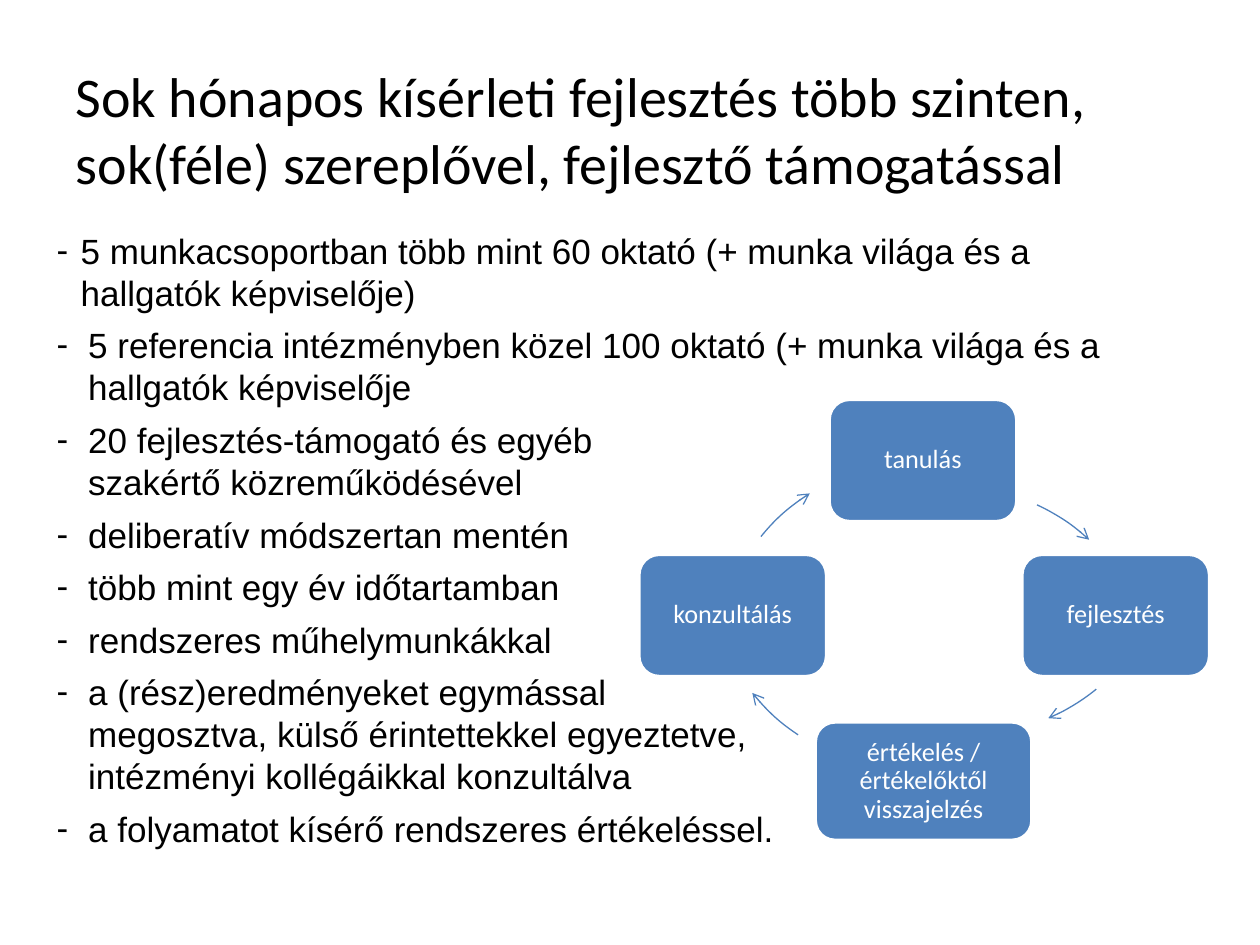
from dataclasses import dataclass

from lxml import etree
from pptx import Presentation
from pptx.dml.color import RGBColor
from pptx.enum.shapes import MSO_SHAPE
from pptx.enum.text import MSO_ANCHOR, MSO_AUTO_SIZE, PP_ALIGN
from pptx.oxml.ns import qn
from pptx.slide import Slide
from pptx.text.text import Font
from pptx.util import Inches, Pt

ROUNDED = MSO_SHAPE.ROUNDED_RECTANGLE
ARC = MSO_SHAPE.ARC
LEFT = PP_ALIGN.LEFT
CENTER = PP_ALIGN.CENTER
MIDDLE = MSO_ANCHOR.MIDDLE
TOP = MSO_ANCHOR.TOP
NO_AUTOFIT = MSO_AUTO_SIZE.NONE

ARC_DIAMETER = 3.2
DEGREES_TO_ADJUSTMENT = 0.6


@dataclass(frozen=True)
class Theme:
    text: RGBColor = RGBColor(0, 0, 0)
    accent: RGBColor = RGBColor(0x4F, 0x81, 0xBD)
    light: RGBColor = RGBColor(255, 255, 255)
    heading_font: str = "Calibri"
    body_font: str = "Arial"
    title_size: int = 32
    body_size: int = 20
    box_size: int = 15


@dataclass(frozen=True)
class Item:
    text: str
    indent: float = 0.25


@dataclass(frozen=True)
class Step:
    text: str
    left: float
    top: float
    width: float = 1.49
    height: float = 0.97


@dataclass(frozen=True)
class Arrow:
    left: float
    top: float
    start: float
    end: float


THEME = Theme()

TITLE = ("Sok hónapos kísérleti fejlesztés több szinten, "
         "sok(féle) szereplővel, fejlesztő támogatással")

ITEMS = [
    Item("5 munkacsoportban több mint 60 oktató (+ munka világa és a "
         "hallgatók képviselője)", 0.19),
    Item("5 referencia intézményben közel 100 oktató (+ munka világa és a "
         "hallgatók képviselője"),
    Item("20 fejlesztés-támogató és egyéb\vszakértő közreműködésével"),
    Item("deliberatív módszertan mentén"),
    Item("több mint egy év időtartamban"),
    Item("rendszeres műhelymunkákkal"),
    Item("a (rész)eredményeket egymással\vmegosztva, külső érintettekkel "
         "egyeztetve,\vintézményi kollégáikkal konzultálva"),
    Item("a folyamatot kísérő rendszeres értékeléssel."),
]

STEPS = [
    Step("tanulás", 6.58, 3.17),
    Step("fejlesztés", 8.11, 4.4),
    Step("értékelés / értékelőktől visszajelzés", 6.47, 5.73, 1.72, 0.94),
    Step("konzultálás", 5.07, 4.4),
]

ARROWS = [
    Arrow(5.96, 3.86, 294.8, 312.7),
    Arrow(6.09, 2.63, 50.8, 66.8),
    Arrow(5.62, 2.9, 123.6, 141.3),
    Arrow(5.68, 3.67, 219.2, 237.8),
]


def style_font(font: Font, name: str, size: int, color: RGBColor) -> None:
    font.name = name
    font.size = Pt(size)
    font.color.rgb = color


def fill_title(slide: Slide) -> None:
    title = slide.shapes.title
    title.left, title.top = Inches(0.5), Inches(0.44)
    title.width, title.height = Inches(9), Inches(1.18)
    frame = title.text_frame
    frame.text = TITLE
    frame.auto_size = NO_AUTOFIT
    frame.vertical_anchor = TOP
    para = frame.paragraphs[0]
    para.alignment = LEFT
    style_font(para.font, THEME.heading_font, THEME.title_size, THEME.text)


def fill_body(slide: Slide) -> None:
    body = slide.placeholders[1]
    body.left, body.top = Inches(0.35), Inches(1.77)
    body.width, body.height = Inches(8.61), Inches(5.2)
    frame = body.text_frame
    frame.auto_size = NO_AUTOFIT
    for index, item in enumerate(ITEMS):
        para = frame.add_paragraph() if index else frame.paragraphs[0]
        para.text = item.text
        properties = para._p.get_or_add_pPr()
        properties.set("marL", str(Inches(item.indent)))
        properties.set("indent", str(-Inches(item.indent)))
        etree.SubElement(properties, qn("a:buChar")).set("char", "-")
        para.line_spacing = Pt(24)
        para.space_before = Pt(0)
        para.space_after = Pt(6)
        style_font(para.font, THEME.body_font, THEME.body_size, THEME.text)


def draw_step(slide: Slide, step: Step) -> None:
    box = slide.shapes.add_shape(
        ROUNDED, Inches(step.left), Inches(step.top),
        Inches(step.width), Inches(step.height))
    box.shadow.inherit = False
    box.fill.solid()
    box.fill.fore_color.rgb = THEME.accent
    box.line.color.rgb = THEME.light
    box.line.width = Pt(2)
    frame = box.text_frame
    frame.text = step.text
    frame.word_wrap = True
    frame.vertical_anchor = MIDDLE
    frame.margin_left = frame.margin_right = Inches(0.06)
    frame.margin_top = frame.margin_bottom = Inches(0.06)
    para = frame.paragraphs[0]
    para.alignment = CENTER
    para.line_spacing = 0.9
    style_font(para.font, THEME.heading_font, THEME.box_size, THEME.light)


def draw_arrow(slide: Slide, arrow: Arrow) -> None:
    arc = slide.shapes.add_shape(
        ARC, Inches(arrow.left), Inches(arrow.top),
        Inches(ARC_DIAMETER), Inches(ARC_DIAMETER))
    arc.shadow.inherit = False
    arc.fill.background()
    arc.adjustments[0] = arrow.start * DEGREES_TO_ADJUSTMENT
    arc.adjustments[1] = arrow.end * DEGREES_TO_ADJUSTMENT
    arc.line.color.rgb = THEME.accent
    arc.line.width = Pt(0.75)
    line = arc.line._get_or_add_ln()
    etree.SubElement(line, qn("a:tailEnd")).set("type", "arrow")


def main() -> None:
    deck = Presentation()
    deck.slide_width, deck.slide_height = Inches(10), Inches(7.5)
    slide = deck.slides.add_slide(deck.slide_layouts[1])
    fill_title(slide)
    fill_body(slide)
    for step, arrow in zip(STEPS, ARROWS):
        draw_step(slide, step)
        draw_arrow(slide, arrow)
    deck.save("out.pptx")


if __name__ == "__main__":
    main()
